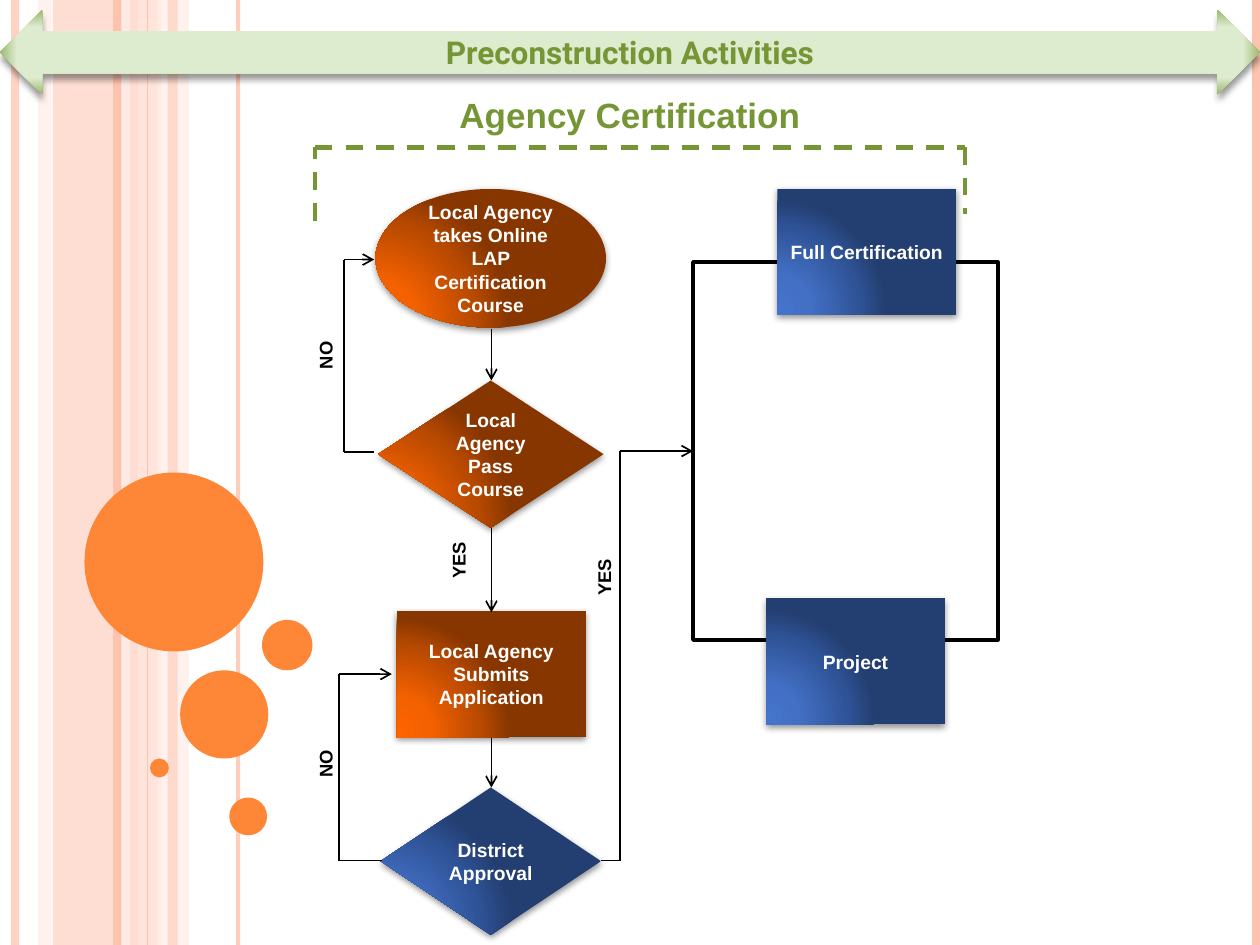
from lxml.etree import SubElement as Sub
from pptx import Presentation
from pptx.dml.color import RGBColor as RGB
from pptx.enum.dml import MSO_LINE as Dash
from pptx.enum.shapes import MSO_CONNECTOR as Wire, MSO_SHAPE as Form
from pptx.enum.text import MSO_ANCHOR as Anchor, PP_ALIGN as Align
from pptx.oxml import parse_xml
from pptx.oxml.ns import nsdecls, qn
from pptx.util import Inches, Pt

BLACK, WHITE = RGB(0, 0, 0), RGB(255, 255, 255)
GREEN = RGB(0x76, 0x95, 0x35)
PEACH = RGB(0xFE, 0xC3, 0xAE)
BLUSH = RGB(0xFF, 0xD9, 0xCE)
PALE = RGB(0xFF, 0xED, 0xE8)
AMBER = RGB(0xFE, 0x86, 0x37)

# Gradients: stops, kind, focus (left, top, right, bottom in percent)
FOCUS = (5, 100, 120, 10)
BLUE = ([(0, RGB(0x45, 0x74, 0xCC)), (30, RGB(0x43, 0x70, 0xC5)),
         (75, RGB(0x2F, 0x53, 0x97)), (100, RGB(0x23, 0x3E, 0x70))], "circle", FOCUS)
RUST = ([(0, RGB(0xFD, 0x64, 0x00)), (30, RGB(0xF4, 0x61, 0x00)),
         (75, RGB(0xB7, 0x49, 0x00)), (100, RGB(0x87, 0x36, 0x00))], "circle", FOCUS)
LEAF = ([(60, RGB(0xDD, 0xEB, 0xCF)), (100, RGB(0x9C, 0xB8, 0x6E)),
         (100, RGB(0x15, 0x6B, 0x13))], "shape", (50, 50, 50, 50))


def box(area):
    return [Inches(n) for n in area]


def fade(node, alpha):
    """Set the opacity of the first colour inside a node."""
    if alpha < 100:
        tint = next(node.iter(qn("a:srgbClr")))
        Sub(tint, qn("a:alpha"), val=str(alpha * 1000))


def write(frame, text, size, color, face="Arial"):
    para = frame.paragraphs[0]
    para.text = text
    para.alignment = Align.CENTER
    para.space_before = Pt(0)
    style = {"name": face, "size": Pt(size), "bold": True}
    for key, val in style.items():
        setattr(para.font, key, val)
    para.font.color.rgb = color


def plain(slide, form, area, color, alpha=100):
    shape = slide.shapes.add_shape(form, *box(area))
    shape.fill.solid()
    shape.fill.fore_color.rgb = color
    shape.line.fill.background()
    shape.shadow.inherit = False
    fade(shape.fill._xPr, alpha)


def shade(shape, grad):
    """Fill a shape with a path gradient."""
    stops, kind, focus = grad
    shape.fill.background()
    marks = "".join(f'<a:gs pos="{pos * 1000}"><a:srgbClr val="{color}"/></a:gs>'
                    for pos, color in stops)
    sides = " ".join(f'{side}="{n * 1000}"' for side, n in zip("ltrb", focus))
    fill = parse_xml(f'<a:gradFill {nsdecls("a")} rotWithShape="1"><a:gsLst>{marks}</a:gsLst>'
                     f'<a:path path="{kind}"><a:fillToRect {sides}/></a:path></a:gradFill>')
    props = shape._element.spPr
    props.replace(props.find(qn("a:noFill")), fill)


def cast(shape, alpha, blur, drop):
    """Give a shape a soft shadow straight below it."""
    shape.shadow.inherit = False
    list_ = shape._element.spPr.find(qn("a:effectLst"))
    outer = Sub(list_, qn("a:outerShdw"), blurRad=str(Pt(blur)), dist=str(Pt(drop)),
                dir="5400000", rotWithShape="0")
    Sub(outer, qn("a:srgbClr"), val=str(BLACK))
    fade(outer, alpha)


def step(slide, form, area, grad, text, size=11, color=WHITE, face="Arial", dim=(42, 4, 1.6)):
    shape = slide.shapes.add_shape(form, *box(area))
    shade(shape, grad)
    shape.line.fill.background()
    cast(shape, *dim)
    frame = shape.text_frame
    looks = {"word_wrap": True, "vertical_anchor": Anchor.MIDDLE,
             "margin_left": Inches(0.05), "margin_right": Inches(0.05)}
    for key, val in looks.items():
        setattr(frame, key, val)
    write(frame, text, size, color, face)


def route(slide, points, color=BLACK, width=1, dash=None, tip=False, alpha=100):
    """Join points with straight lines, with an arrowhead at the end if asked."""
    for start, end in zip(points, points[1:]):
        wire = slide.shapes.add_connector(Wire.STRAIGHT, *box(start + end))
        wire.line.color.rgb = color
        wire.line.width = Pt(width)
        wire.line.dash_style = dash
        props = wire._element.spPr
        fade(props, alpha)
        if tip and end == points[-1]:
            Sub(props.find(qn("a:ln")), qn("a:tailEnd"), type="arrow")
        Sub(props, qn("a:effectLst"))


def label(slide, area, text, turn=270):
    note = slide.shapes.add_textbox(*box(area))
    note.rotation = turn
    note.text_frame.word_wrap = True
    write(note.text_frame, text, 10.5, BLACK)
    return note


def backdrop(slide):
    # Vertical bands: left, width, colour, opacity
    for left, width, color, alpha in [(0.42, 0.67, PEACH, 54), (0.3, 0.11, BLUSH, 36),
                                      (1.08, 0.2, BLUSH, 70), (1.25, 0.25, PALE, 71)]:
        plain(slide, Form.RECTANGLE, (left, 0, width, 7.5), color, alpha)
    # Vertical rules: x, colour, width, opacity
    for x, color, width, alpha in [(0.12, PEACH, 4.5, 73), (1, PALE, 4.5, 83),
                                   (0.93, PEACH, 4.5, 100), (1.89, PEACH, 2.25, 82),
                                   (1.17, PEACH, 0.75, 100), (9.97, PEACH, 4.5, 100)]:
        route(slide, [(x, 0), (x, 7.5)], color, width, alpha=alpha)
    plain(slide, Form.RECTANGLE, (1.33, 0, 0.08, 7.5), PEACH, 51)
    # Bubbles: left, top, diameter
    for left, top, size in [(0.67, 3.75, 1.42), (1.43, 5.32, 0.7), (1.19, 6.02, 0.15),
                            (1.82, 6.33, 0.3), (2.08, 4.92, 0.4)]:
        plain(slide, Form.OVAL, (left, top, size, size), AMBER)


def flow(slide):
    # Frame that links the two outcomes
    link = slide.shapes.add_shape(Form.RECTANGLE, *box((5.5, 2.08, 2.42, 3)))
    link.fill.background()
    link.line.color.rgb = BLACK
    link.line.width = Pt(2)
    link.shadow.inherit = False

    # Steps
    for form, area, grad, text in [
        (Form.RECTANGLE, (6.08, 4.75, 1.42, 1), BLUE, "Project"),
        (Form.RECTANGLE, (6.17, 1.5, 1.42, 1), BLUE, "Full Certification"),
        (Form.RECTANGLE, (3.15, 4.85, 1.5, 1), RUST, "Local Agency Submits Application"),
        (Form.DIAMOND, (3.02, 6.25, 1.75, 1.17), BLUE, "District Approval"),
        (Form.OVAL, (2.98, 1.5, 1.83, 1.1), RUST,
         "Local Agency takes Online LAP Certification Course"),
        (Form.DIAMOND, (3, 3.02, 1.79, 1.17), RUST, "Local Agency Pass Course"),
    ]:
        step(slide, form, area, grad, text)

    # Arrows down, back and across
    for top, end in [(2.61, 3.02), (4.19, 4.86), (5.86, 6.25)]:
        route(slide, [(3.9, top), (3.9, end)], tip=True)
    for points in [
        [(2.97, 3.59), (2.73, 3.59), (2.73, 2.06), (2.97, 2.06)],
        [(3.03, 6.83), (2.69, 6.83), (2.69, 5.35), (3.11, 5.35)],
        [(4.77, 6.83), (4.92, 6.83), (4.92, 3.58), (5.5, 3.58)],
    ]:
        route(slide, points, tip=True)

    # Answers
    label(slide, (2.1, 2.68, 0.97, 0.28), "NO")
    label(slide, (2.1, 5.92, 0.97, 0.28), "NO")
    label(slide, (4.46, 4.44, 0.67, 0.28), "YES")
    note = label(slide, (3.5, 4.25, 0.38, 0.39), "YES", 0)
    note.text_frame.word_wrap = False
    note.text_frame._txBody.bodyPr.set("vert", "vert270")


def heading(slide):
    # Dashed bracket
    route(slide, [(2.5, 1.75), (2.5, 1.17), (7.66, 1.17), (7.66, 1.7)],
          GREEN, 2.5, Dash.DASH)
    title = slide.shapes.title
    spot = dict(zip(("left", "top", "width", "height"), box((2.5, 0.69, 5, 0.44))))
    for key, val in spot.items():
        setattr(title, key, val)
    title.text_frame.vertical_anchor = Anchor.MIDDLE
    write(title.text_frame, "Agency Certification", 20, GREEN)
    step(slide, Form.LEFT_RIGHT_ARROW, (0, 0.08, 10, 0.67), LEAF,
         "Preconstruction Activities", 18, GREEN, "Roboto", (40, 4, 3))


def main():
    deck = Presentation()
    deck.slide_width, deck.slide_height = Inches(10), Inches(7.5)
    slide = deck.slides.add_slide(deck.slide_layouts[5])
    backdrop(slide)
    flow(slide)
    heading(slide)
    deck.save("out.pptx")


if __name__ == "__main__":
    main()
